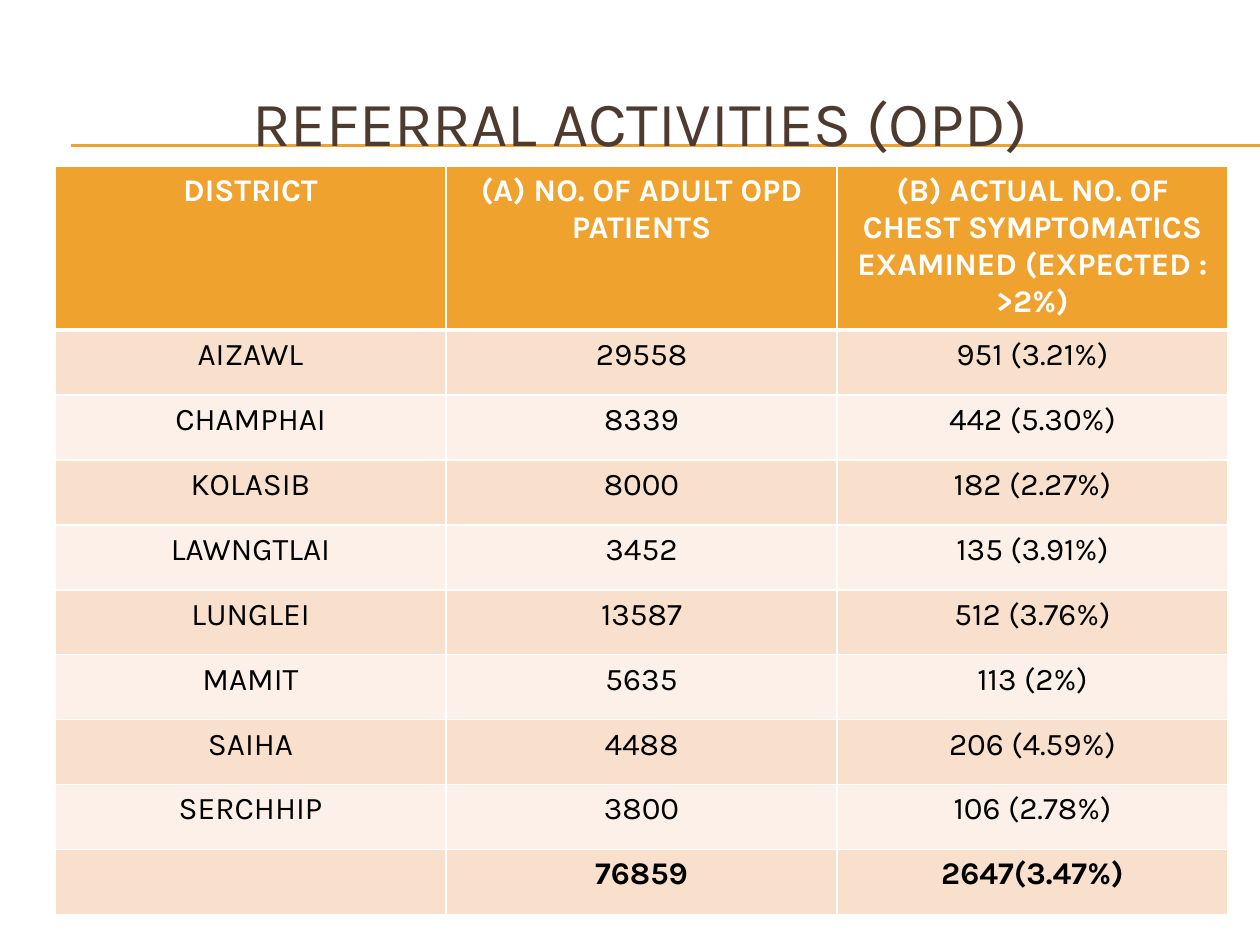
import pptx
import pptx.dml.color
import pptx.enum.shapes
import pptx.enum.text
import pptx.oxml.ns
import pptx.util
from lxml import etree

TITLE = "REFERRAL ACTIVITIES (OPD)"
HEADINGS = (
    "DISTRICT",
    "(A) NO. OF ADULT OPD PATIENTS",
    "(B) ACTUAL NO. OF CHEST SYMPTOMATICS EXAMINED (EXPECTED : >2%)",
)
DISTRICTS = [
    ("AIZAWL", "29558", "951 (3.21%)"),
    ("CHAMPHAI", "8339", "442 (5.30%)"),
    ("KOLASIB", "8000", "182 (2.27%)"),
    ("LAWNGTLAI", "3452", "135 (3.91%)"),
    ("LUNGLEI", "13587", "512 (3.76%)"),
    ("MAMIT", "5635", "113 (2%)"),
    ("SAIHA", "4488", "206 (4.59%)"),
    ("SERCHHIP", "3800", "106 (2.78%)"),
]
TOTALS = ("", "76859", "2647(3.47%)")

COLORS = {
    "accent": "F0A22E",
    "title": "4E3B30",
    "white": "FFFFFF",
    "black": "000000",
    "band_dark": "F9E0CD",
    "band_light": "FCF0E8",
}
FONT = "Karla"
SLIDE_W, SLIDE_H = 1260, 945
RULE_LEFT, RULE_TOPS = 71, (145, 146)
TITLE_BOX = (42, 63, 1197, 116)
TABLE_LEFT, TABLE_TOP, TABLE_W = 55, 166, 1173
HEADING_H, ROW_H = 159, 65


def px(length):
    return round(length * 914400 / 126)


def rgb(name):
    return pptx.dml.color.RGBColor.from_string(COLORS[name])


def write(frame, text, size, color, bold=False):
    frame.text = text
    paragraph = frame.paragraphs[0]
    paragraph.alignment = pptx.enum.text.PP_ALIGN.CENTER
    for run in paragraph.runs:
        run.font.name = FONT
        run.font.size = pptx.util.Pt(size)
        run.font.bold = bold
        run.font.color.rgb = rgb(color)


def add_rule(slide, top):
    rule = slide.shapes.add_connector(
        pptx.enum.shapes.MSO_CONNECTOR.STRAIGHT,
        px(RULE_LEFT), px(top), px(SLIDE_W), px(top))
    rule.line.color.rgb = rgb("accent")
    rule.line.width = pptx.util.Pt(0.75)
    etree.SubElement(rule._element.spPr, pptx.oxml.ns.qn("a:effectLst"))


def add_borders(cell, top, bottom):
    qn = pptx.oxml.ns.qn
    properties = cell._tc.get_or_add_tcPr()
    for side, points in (("L", 1), ("R", 1), ("T", top), ("B", bottom)):
        border = etree.SubElement(
            properties, qn(f"a:ln{side}"), w=str(pptx.util.Pt(points)))
        fill = etree.SubElement(border, qn("a:solidFill"))
        etree.SubElement(fill, qn("a:srgbClr"), val=COLORS["white"])


def add_district_table(slide):
    rows = [HEADINGS, *DISTRICTS, TOTALS]
    last = len(rows) - 1
    table = slide.shapes.add_table(
        len(rows), len(HEADINGS), px(TABLE_LEFT), px(TABLE_TOP),
        px(TABLE_W), px(HEADING_H + ROW_H * last)).table
    for column in table.columns:
        column.width = px(TABLE_W // len(HEADINGS))
    for r, values in enumerate(rows):
        heading = r == 0
        table.rows[r].height = px(HEADING_H if heading else ROW_H)
        band = "accent" if heading else "band_dark" if r % 2 else "band_light"
        for c, value in enumerate(values):
            cell = table.cell(r, c)
            add_borders(cell, 3 if r == 1 else 1, 3 if heading else 1)
            cell.fill.solid()
            cell.fill.fore_color.rgb = rgb(band)
            write(cell.text_frame, value, 18,
                  "white" if heading else "black", r in (0, last))


def main():
    deck = pptx.Presentation()
    deck.slide_width, deck.slide_height = px(SLIDE_W), px(SLIDE_H)
    slide = deck.slides.add_slide(deck.slide_layouts[6])
    for top in RULE_TOPS:
        add_rule(slide, top)
    title = slide.shapes.add_textbox(*map(px, TITLE_BOX)).text_frame
    title.word_wrap = True
    title.vertical_anchor = pptx.enum.text.MSO_ANCHOR.MIDDLE
    write(title, TITLE, 36, "title")
    add_district_table(slide)
    deck.save("out.pptx")


if __name__ == "__main__":
    main()
